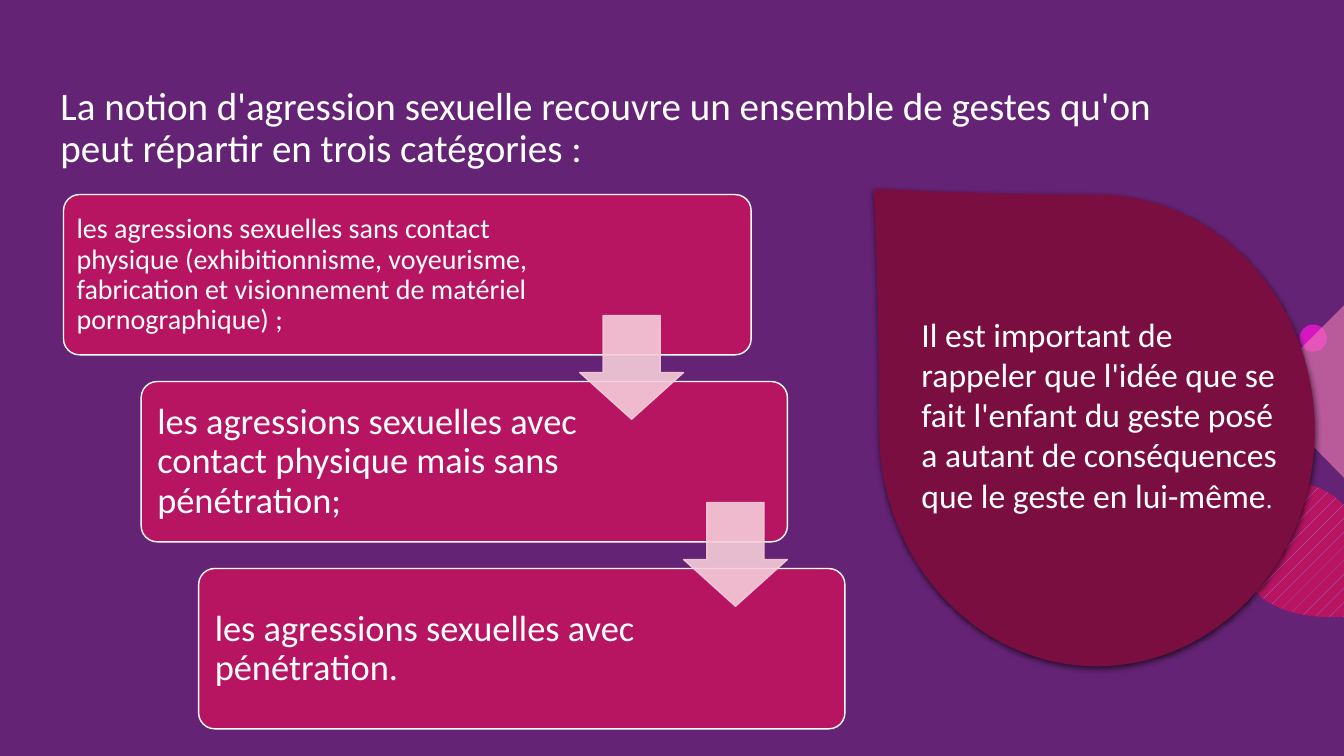
from lxml import etree
from pptx import Presentation
from pptx.dml.color import RGBColor
from pptx.enum.dml import MSO_PATTERN
from pptx.enum.shapes import MSO_SHAPE
from pptx.enum.text import MSO_ANCHOR, MSO_AUTO_SIZE, PP_ALIGN
from pptx.oxml.ns import qn
from pptx.util import Inches, Pt

PURPLE = RGBColor(0x65, 0x23, 0x75)
MAGENTA = RGBColor(0xB7, 0x15, 0x62)
WINE = RGBColor(0x7A, 0x0E, 0x41)
ROSE = RGBColor(0xF6, 0xCD, 0xD9)
PINK = RGBColor(0xF1, 0x7F, 0xB5)
FUCHSIA = RGBColor(0xD5, 0x17, 0xC0)
LILAC = RGBColor(0x9A, 0x7B, 0xE8)
WHITE = RGBColor(0xFF, 0xFF, 0xFF)
BLACK = RGBColor(0, 0, 0)

ROUNDED = MSO_SHAPE.ROUNDED_RECTANGLE
DOWN_ARROW = MSO_SHAPE.DOWN_ARROW
TEARDROP = MSO_SHAPE.TEAR
OVAL = MSO_SHAPE.OVAL
DOTS = MSO_PATTERN.PERCENT_5
TOP = MSO_ANCHOR.TOP
MIDDLE = MSO_ANCHOR.MIDDLE
BOTTOM = MSO_ANCHOR.BOTTOM
NO_FIT = MSO_AUTO_SIZE.NONE
LEFT = PP_ALIGN.LEFT

TITLE = ("La notion d'agression sexuelle recouvre un ensemble de gestes qu'on "
         "peut répartir en trois catégories :")
CARDS = [
    (0, 6.82, 5, 20, 0.08,
     "les agressions sexuelles sans contact physique (exhibitionnisme, voyeurisme, "
     "fabrication et visionnement de matériel pornographique) ;"),
    (0.77, 6.41, 4.72, 26, 0.11,
     "les agressions sexuelles avec contact physique mais sans pénétration;"),
    (1.34, 6.41, 4.72, 26, 0.11, "les agressions sexuelles avec pénétration."),
]
REMINDER = ("Il est important de rappeler que l'idée que se fait l'enfant du geste "
            "posé a autant de conséquences que le geste en lui-même")


def add_shape(s, kind, box, color, line=None):
    sp = s.shapes.add_shape(kind, *map(Inches, box))
    sp.shadow.inherit = False
    sp.fill.solid()
    sp.fill.fore_color.rgb = color
    if line is None:
        sp.line.fill.background()
    else:
        sp.line.color.rgb = line
        sp.line.width = Pt(1)
    return sp


def set_alpha(sp, percent):
    for color in sp._element.spPr.iter(qn("a:srgbClr")):
        etree.SubElement(color, qn("a:alpha")).set("val", str(percent * 1000))


def add_shadow(sp, color, percent, blur, distance, angle):
    effects = sp._element.spPr.find(qn("a:effectLst"))
    shadow = etree.SubElement(effects, qn("a:outerShdw"), blurRad=str(Pt(blur)),
                              dist=str(Pt(distance)), dir=str(angle * 60000),
                              algn="ctr", rotWithShape="0")
    clr = etree.SubElement(shadow, qn("a:srgbClr"), val=str(color))
    etree.SubElement(clr, qn("a:alpha"), val=str(percent * 1000))


def write(tf, runs, anchor, spacing=1.0, insets=(0.1, 0.05, 0.1, 0.05)):
    tf.word_wrap = True
    tf.auto_size = NO_FIT
    tf.vertical_anchor = anchor
    tf.margin_left, tf.margin_top, tf.margin_right, tf.margin_bottom = map(Inches, insets)
    p = tf.paragraphs[0]
    p.alignment = LEFT
    p.line_spacing = spacing
    for text, size, font in runs:
        r = p.add_run()
        r.text = text
        r.font.size = Pt(size)
        r.font.name = font
        r.font.color.rgb = WHITE


def curve(*points, steps=16):
    result = []
    for i in range(1, steps + 1):
        t = i / steps
        weights = ((1 - t) ** 3, 3 * t * (1 - t) ** 2, 3 * t * t * (1 - t), t ** 3)
        result.append(tuple(sum(w * pt[axis] for w, pt in zip(weights, points))
                            for axis in (0, 1)))
    return result


def add_outline(s, box, points):
    x, y = box
    scaled = [(Inches(x + px), Inches(y + py)) for px, py in points]
    builder = s.shapes.build_freeform(*scaled[0])
    builder.add_line_segments(scaled[1:], close=True)
    sp = builder.convert_to_shape()
    sp.shadow.inherit = False
    sp.line.fill.background()
    return sp


def draw_decor(s, x, y):
    add_shape(s, OVAL, (x + 0.69, y + 0.19, 0.27, 0.27), FUCHSIA)

    leaf = [(1.1, 3.09), (1.13, 3.09), (1.13, 1.98), (1.12, 1.97)]
    leaf += curve((1.12, 1.97), (0.76, 1.6), (0.02, 1.74), (0.02, 1.74))
    leaf += curve((0.02, 1.74), (0.02, 1.74), (-0.12, 2.47), (0.25, 2.84))
    leaf += curve((0.25, 2.84), (0.48, 3.07), (0.83, 3.1), (1.1, 3.09))
    sp = add_outline(s, (x, y), leaf)
    sp.fill.patterned()
    sp.fill.pattern = DOTS
    sp.fill.fore_color.rgb = LILAC
    sp.fill.back_color.rgb = MAGENTA

    diamond = [(1.13, 0), (1.13, 1.71), (0.71, 1.28)]
    diamond += curve((0.71, 1.28), (0.47, 1.05), (0.47, 0.66), (0.71, 0.42))
    sp = add_outline(s, (x, y), diamond)
    sp.fill.solid()
    sp.fill.fore_color.rgb = PINK
    set_alpha(sp, 60)


def draw_title(s, x, y, w, h):
    title = s.shapes.title
    title.left, title.top, title.width, title.height = map(Inches, (x, y, w, h))
    write(title.text_frame, [(TITLE, 27.9, "Calibri")], BOTTOM, 0.9, (0.1, 0.05, 0.1, 0.48))


def draw_cascade(s, x, y, h, step):
    for i, (indent, w, text_w, size, inset, text) in enumerate(CARDS):
        left, top = x + indent, y + i * step
        sp = add_shape(s, ROUNDED, (left, top, w, h), MAGENTA, WHITE)
        sp.adjustments[0] = 0.1
        label = s.shapes.add_textbox(*map(Inches, (left + 0.05, top + 0.05, text_w, h - 0.09)))
        write(label.text_frame, [(text, size, "Calibri")], MIDDLE, 0.9, (inset,) * 4)

    side = 1.03
    for i in range(len(CARDS) - 1):
        box = (x + 5.12 + i * side, y + 1.2 + i * step, side, side)
        arrow = add_shape(s, DOWN_ARROW, box, ROSE, ROSE)
        arrow.adjustments[0] = 0.55
        arrow.adjustments[1] = 0.45
        set_alpha(arrow, 90)


def draw_reminder(s, x, y, w, h):
    drop = add_shape(s, TEARDROP, (x, y, w, h), WINE)
    drop.adjustments[0] = 1.025
    drop._element.spPr.find(qn("a:xfrm")).set("flipH", "1")
    add_shadow(drop, BLACK, 63, 4.5, 1.5, 90)
    label = s.shapes.add_textbox(*map(Inches, (x + 0.32, y + 1.13, 3.89, 2.42)))
    write(label.text_frame, [(REMINDER, 24, "Calibri"), (".", 18, "Open Sans")], TOP)


def main():
    prs = Presentation()
    prs.slide_width = Inches(13.33)
    prs.slide_height = Inches(7.5)
    s = prs.slides.add_slide(prs.slide_layouts[5])
    s.background.fill.solid()
    s.background.fill.fore_color.rgb = PURPLE
    draw_decor(s, 12.2, 3.03)
    draw_title(s, 0.5, 0.19, 11.43, 1.99)
    draw_cascade(s, 0.63, 1.93, 1.59, 1.855)
    draw_reminder(s, 8.72, 1.93, 4.32, 4.68)
    prs.save("out.pptx")


if __name__ == "__main__":
    main()
